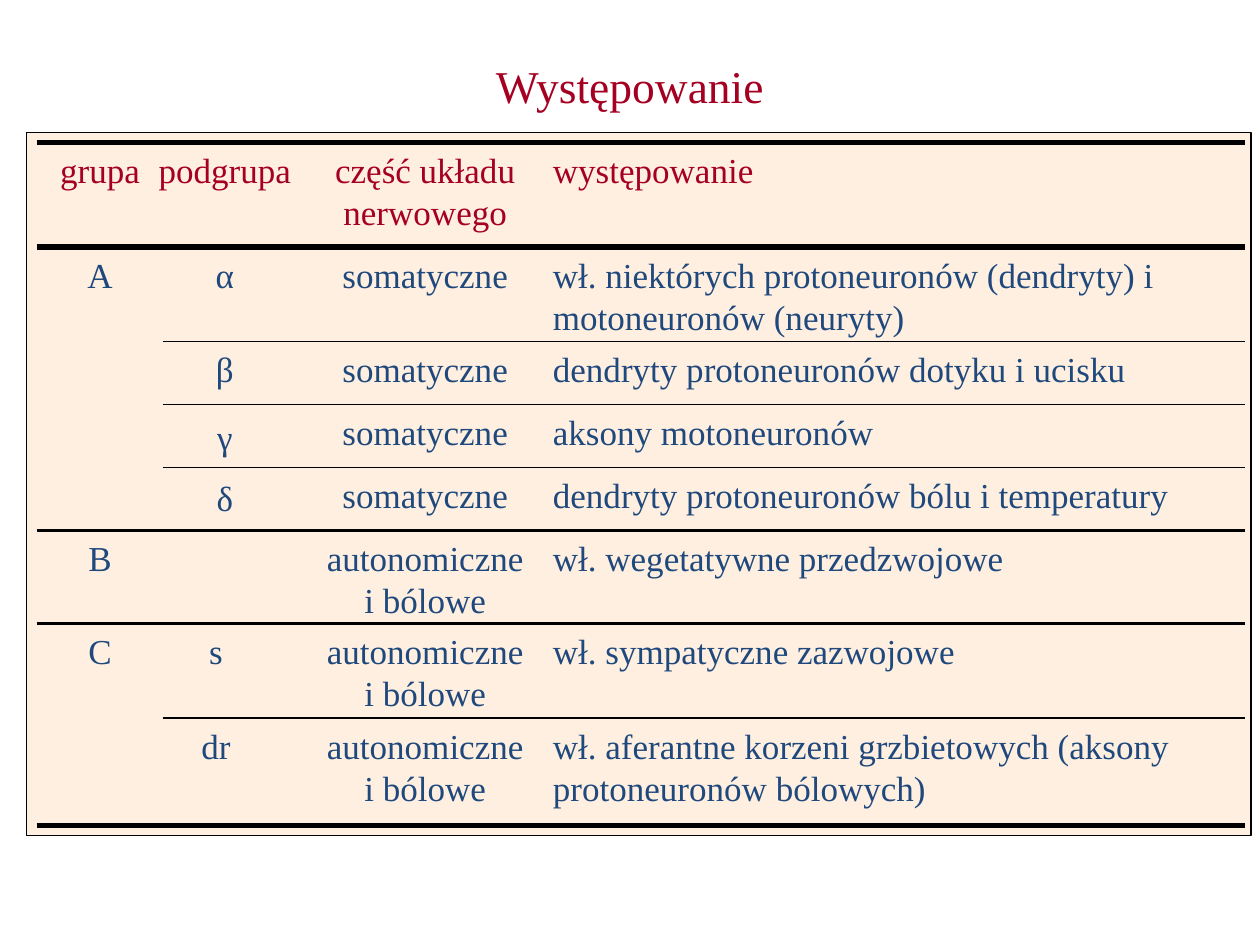
"""Build a slide with a ruled table of nerve fibre groups and where they occur."""
from dataclasses import dataclass

from lxml.etree import SubElement
from pptx import Presentation
from pptx.dml.color import RGBColor as RGB
from pptx.enum.shapes import MSO_CONNECTOR as CONN, MSO_SHAPE as SHAPE
from pptx.enum.text import MSO_AUTO_SIZE as AUTO, PP_ALIGN as ALIGN
from pptx.oxml.ns import qn
from pptx.util import Inches, Pt


@dataclass(frozen=True)
class Theme:
    font: str = "Times New Roman"
    title_size: Pt = Pt(26)
    body_size: Pt = Pt(20)
    heading: RGB = RGB(0xA5, 0x00, 0x21)
    body: RGB = RGB(0x1F, 0x49, 0x7D)
    panel: RGB = RGB(0xFF, 0xE1, 0xC3)
    rule: RGB = RGB(0, 0, 0)


T = Theme()
ONE_LINE, TWO_LINES = 0.43, 0.77
THIN, MEDIUM, THICK = 1, 1.5, 3
FULL, INDENTED, RIGHT = 0.29, 1.29, 9.88

prs = Presentation()
prs.slide_width, prs.slide_height = Inches(10), Inches(7.5)
s = prs.slides.add_slide(prs.slide_layouts[6])


def add_text(text, left, top, width, height, size, color, align):
    box = s.shapes.add_textbox(Inches(left), Inches(top), Inches(width), Inches(height))
    tf = box.text_frame
    tf.word_wrap = True
    tf.auto_size = AUTO.SHAPE_TO_FIT_TEXT
    p = tf.paragraphs[0]
    p.text = text
    p.alignment = align
    p.font.name, p.font.size = T.font, size
    p.font.color.rgb = color
    return box


def add_rule(left, y, weight):
    line = s.shapes.add_connector(CONN.STRAIGHT, Inches(left), Inches(y), Inches(RIGHT), Inches(y))
    line.line.color.rgb = T.rule
    line.line.width = Pt(weight)
    SubElement(line._element.spPr, qn("a:effectLst"))


add_text("Występowanie", 0, 0.41, 10, 0.53, T.title_size, T.heading, ALIGN.CENTER)

panel = s.shapes.add_shape(SHAPE.RECTANGLE, Inches(0.21), Inches(1.05), Inches(9.72), Inches(5.58))
panel.shadow.inherit = False
panel.fill.solid()
panel.fill.fore_color.rgb = T.panel
SubElement(panel._element.spPr.find(".//" + qn("a:srgbClr")), qn("a:alpha"), val="50000")
panel.line.color.rgb = T.rule
panel.line.width = Pt(0.75)

columns = [
    (0.21, 1.17, 12, ALIGN.CENTER),
    (1.12, 1.33, 12, ALIGN.CENTER),
    (2.46, 1.83, 12, ALIGN.CENTER),
    (4.29, 5.5, 45, ALIGN.LEFT),
]
rows = [
    (1.13, FULL, THICK, ("grupa", "podgrupa", "część układu nerwowego", "występowanie")),
    (1.96, FULL, THICK, ("A", "α", "somatyczne",
                         "wł. niektórych protoneuronów (dendryty) i motoneuronów (neuryty)")),
    (2.71, INDENTED, THIN, ("", "β", "somatyczne", "dendryty protoneuronów dotyku i ucisku")),
    (3.21, INDENTED, THIN, ("", "γ", "somatyczne", "aksony motoneuronów")),
    (3.71, INDENTED, THIN, ("", "δ", "somatyczne", "dendryty protoneuronów bólu i temperatury")),
    (4.21, FULL, MEDIUM, ("B", "", "autonomiczne i bólowe", "wł. wegetatywne przedzwojowe")),
    (4.95, FULL, MEDIUM, ("C", "s", "autonomiczne i bólowe", "wł. sympatyczne zazwojowe")),
    (5.7, INDENTED, THIN, ("", "dr", "autonomiczne i bólowe",
                           "wł. aferantne korzeni grzbietowych (aksony protoneuronów bólowych)")),
]
drops = {"γ": 0.04, "δ": 0.02}

for i, (top, rule_left, weight, cells) in enumerate(rows):
    add_rule(rule_left, top, weight)
    color = T.heading if i == 0 else T.body
    for (left, width, limit, align), text in zip(columns, cells):
        if not text:
            continue
        height = TWO_LINES if len(text) > limit else ONE_LINE
        box = add_text(text, left, top + drops.get(text, 0), width, height,
                       T.body_size, color, align)
        if text in ("s", "dr"):
            box.text_frame.margin_right = Inches(0.24)
add_rule(FULL, 6.55, THICK)

prs.save("out.pptx")
